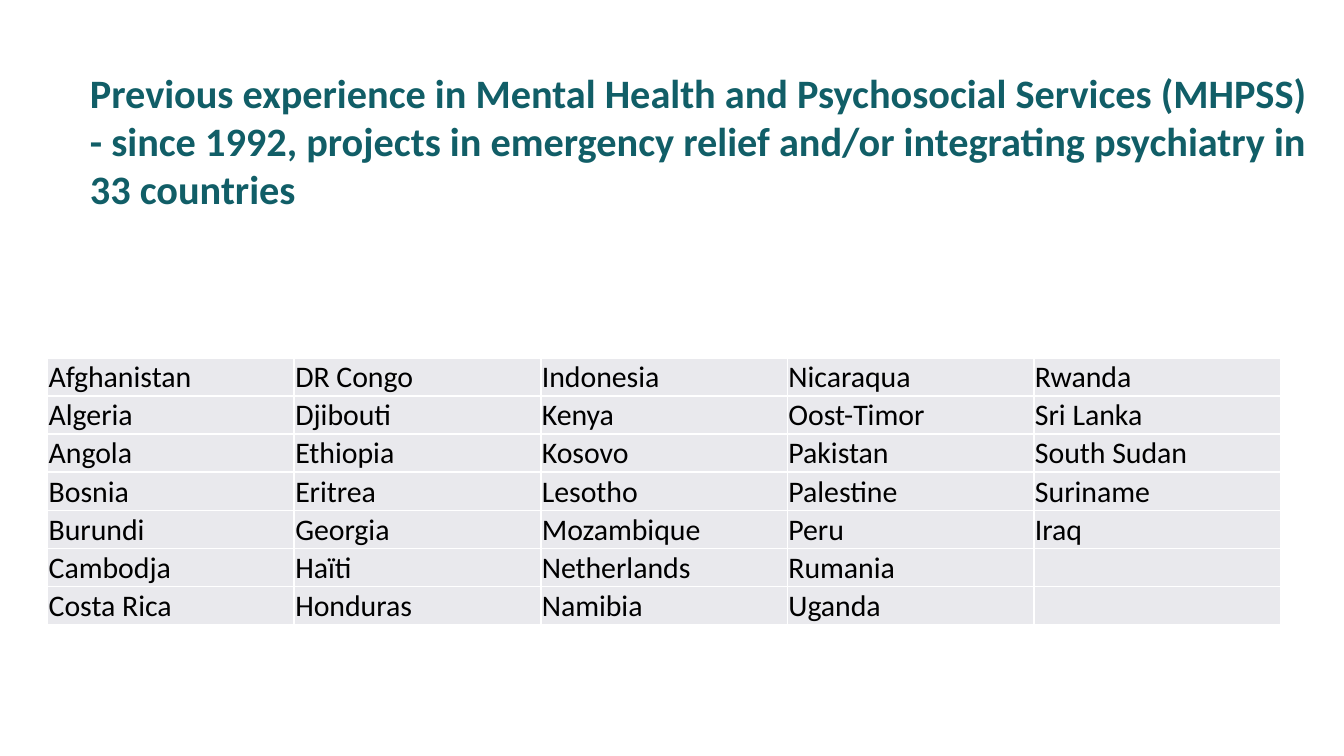
import pptx
import pptx.util
import pptx.dml.color
import pptx.enum.text
import lxml.etree
from pptx.oxml.ns import qn

Cm, Pt = pptx.util.Cm, pptx.util.Pt
RGB = pptx.dml.color.RGBColor.from_string
MIDDLE = pptx.enum.text.MSO_ANCHOR.MIDDLE

# Content
TITLE = ("Previous experience in Mental Health and Psychosocial Services (MHPSS) "
         "- since 1992, projects in emergency relief and/or integrating "
         "psychiatry in 33 countries")
COUNTRIES = [  # one list per column
    ["Afghanistan", "Algeria", "Angola", "Bosnia", "Burundi", "Cambodja", "Costa Rica"],
    ["DR Congo", "Djibouti", "Ethiopia", "Eritrea", "Georgia", "Haïti", "Honduras"],
    ["Indonesia", "Kenya", "Kosovo", "Lesotho", "Mozambique", "Netherlands", "Namibia"],
    ["Nicaraqua", "Oost-Timor", "Pakistan", "Palestine", "Peru", "Rumania", "Uganda"],
    ["Rwanda", "Sri Lanka", "South Sudan", "Suriname", "Iraq"],
]

# Format
COLORS = {"title": "115E67", "text": "000000", "cell": "E9E9ED", "border": "FFFFFF"}
TITLE_FONT = {"name": "Calibri", "size": Pt(21.6), "bold": True}
CELL_FONT = {"name": "Calibri", "size": Pt(16), "bold": False}
TITLE_FRAME = {"word_wrap": True, "vertical_anchor": MIDDLE, "margin_left": 0,
               "margin_right": 0, "margin_top": 0, "margin_bottom": 0}
CELL_FORMAT = {"vertical_anchor": MIDDLE, "margin_left": Cm(0.02),
               "margin_right": Cm(0.02), "margin_top": Cm(0.02), "margin_bottom": 0}
TABLE_FLAGS = {"first_row": False, "horz_banding": False}
COL_WIDTH, ROW_HEIGHT = Cm(4.66), Cm(0.72)


def apply(obj, values):
    for name, value in values.items():
        setattr(obj, name, value)


def write(p, text, font, color):
    r = p.add_run()
    r.text = text
    apply(r.font, font)
    r.font.color.rgb = RGB(color)


def add_borders(cell):
    tc_pr = cell._tc.get_or_add_tcPr()
    for side in ("lnL", "lnR", "lnT", "lnB"):
        ln = lxml.etree.SubElement(tc_pr, qn("a:" + side), w=str(Pt(1)))
        fill = lxml.etree.SubElement(ln, qn("a:solidFill"))
        lxml.etree.SubElement(fill, qn("a:srgbClr"), val=COLORS["border"])


prs = pptx.Presentation()
prs.slide_width, prs.slide_height = Cm(25.4), Cm(14.28)
s = prs.slides.add_slide(prs.slide_layouts[6])

# Title
tf = s.shapes.add_textbox(Cm(1.7), Cm(1.35), Cm(23.09), Cm(2.6)).text_frame
apply(tf, TITLE_FRAME)
write(tf.paragraphs[0], TITLE, TITLE_FONT, COLORS["title"])

# Country table
n_cols, n_rows = len(COUNTRIES), max(map(len, COUNTRIES))
table = s.shapes.add_table(n_rows, n_cols, Cm(0.9), Cm(6.76),
                           COL_WIDTH * n_cols, ROW_HEIGHT * n_rows).table
apply(table, TABLE_FLAGS)
for col in table.columns:
    col.width = COL_WIDTH
for row in table.rows:
    row.height = ROW_HEIGHT

for i, names in enumerate(COUNTRIES):
    for j in range(n_rows):
        cell = table.cell(j, i)
        apply(cell, CELL_FORMAT)
        add_borders(cell)
        cell.fill.solid()
        cell.fill.fore_color.rgb = RGB(COLORS["cell"])
        p = cell.text_frame.paragraphs[0]
        if j < len(names):
            write(p, names[j], CELL_FONT, COLORS["text"])
        else:  # keep the empty line as low as the others
            lxml.etree.SubElement(p._p, qn("a:endParaRPr"), sz="1600")

prs.save("out.pptx")
